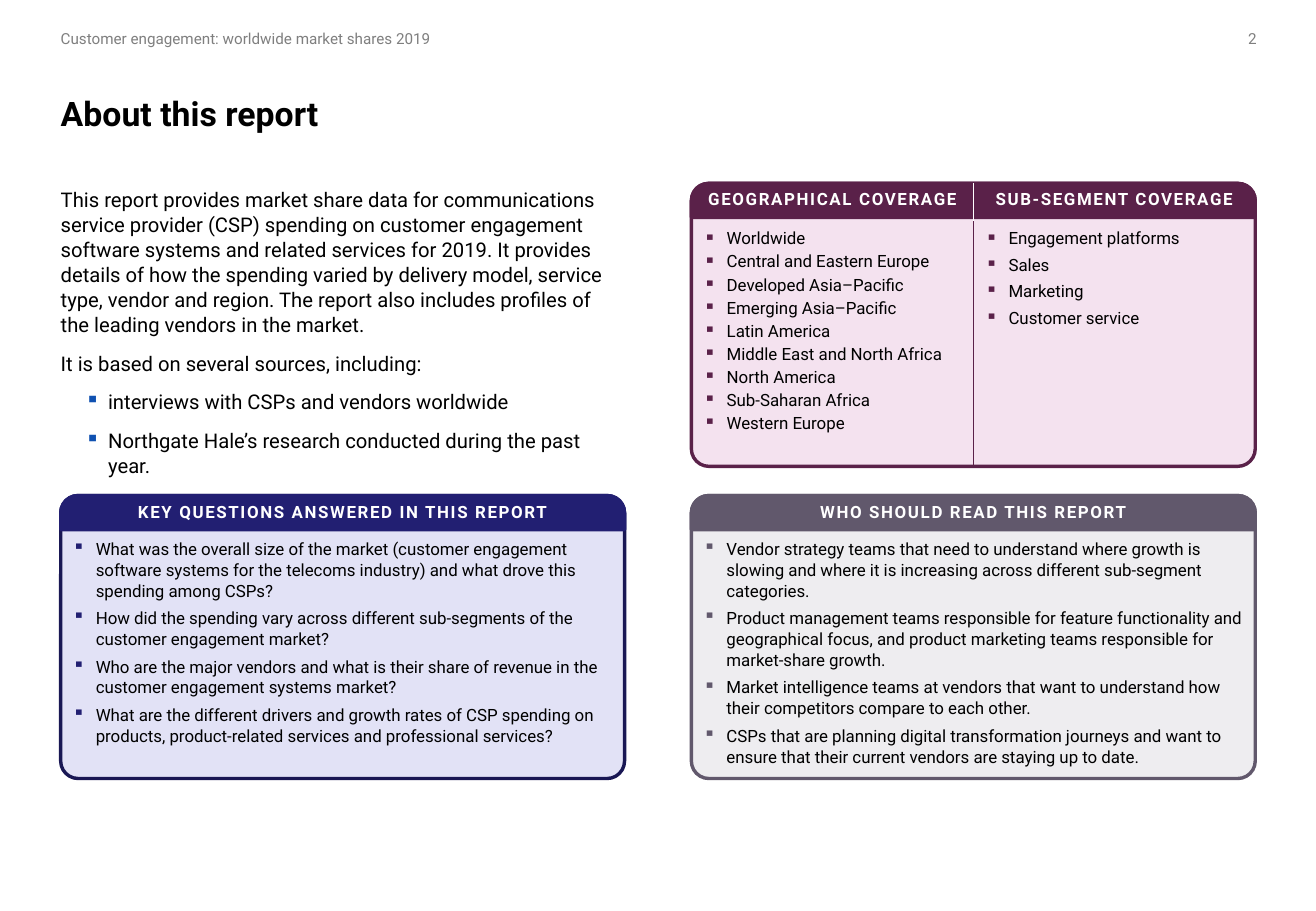
from dataclasses import dataclass

from lxml import etree
from pptx import Presentation
from pptx.dml.color import RGBColor
from pptx.enum.shapes import MSO_CONNECTOR, MSO_SHAPE
from pptx.enum.text import MSO_ANCHOR, PP_ALIGN
from pptx.oxml.ns import qn
from pptx.util import Inches, Pt

ROUNDED = MSO_SHAPE.ROUNDED_RECTANGLE
ROUNDED_TOP = MSO_SHAPE.ROUND_2_SAME_RECTANGLE
STRAIGHT = MSO_CONNECTOR.STRAIGHT
TOP, MIDDLE = MSO_ANCHOR.TOP, MSO_ANCHOR.MIDDLE
LEFT, CENTER, RIGHT = PP_ALIGN.LEFT, PP_ALIGN.CENTER, PP_ALIGN.RIGHT
PLAIN_TABLE = "{2D5ABB26-0587-4C30-8999-92F81FD0307C}"


@dataclass(frozen=True)
class Theme:
    font: str = "Roboto"
    black: str = "000000"
    white: str = "FFFFFF"
    grey: str = "7F7F7F"
    bullet: str = "0F51B1"
    navy: tuple = ("221F72", "191754", "C7C6EF")
    slate: tuple = ("61586C", "61586C", "DFDCE3")
    plum: tuple = ("5A2149", "5A2149", "EAC6E0")
    small: float = 9
    list_size: float = 10
    body: float = 12
    title: float = 20


THEME = Theme()
COLUMN_LEFT, COLUMN_RIGHT = 0.5, 5.69
PANEL_WIDTH, PANEL_HEIGHT, HEADER_HEIGHT = 4.64, 2.33, 0.28
UPPER_TOP, LOWER_TOP = 1.51, 4.08
HANGING = 0.19

INTRODUCTION = [
    "This report provides market share data for communications service provider (CSP) spending on customer engagement software systems and related services for 2019. It provides details of how the spending varied by delivery model, service type, vendor and region. The report also includes profiles of the leading vendors in the market.",
    "It is based on several sources, including:",
]
SOURCES = [
    "interviews with CSPs and vendors worldwide",
    "Northgate Hale’s research conducted during the past year.",
]
QUESTIONS = [
    "What was the overall size of the market (customer engagement software systems for the telecoms industry) and what drove this spending among CSPs?",
    "How did the spending vary across different sub-segments of the customer engagement market?",
    "Who are the major vendors and what is their share of revenue in the customer engagement systems market?",
    "What are the different drivers and growth rates of CSP spending on products, product-related services and professional services?",
]
READERS = [
    "Vendor strategy teams that need to understand where growth is slowing and where it is increasing across different sub-segment categories.",
    "Product management teams responsible for feature functionality and geographical focus, and product marketing teams responsible for market-share growth.",
    "Market intelligence teams at vendors that want to understand how their competitors compare to each other.",
    "CSPs that are planning digital transformation journeys and want to ensure that their current vendors are staying up to date.",
]
COVERAGE = [
    ("GEOGRAPHICAL COVERAGE", 2, [
        "Worldwide", "Central and Eastern Europe", "Developed Asia–Pacific",
        "Emerging Asia–Pacific", "Latin America", "Middle East and North Africa",
        "North America", "Sub-Saharan Africa", "Western Europe"]),
    ("SUB-SEGMENT COVERAGE", 4, [
        "Engagement platforms", "Sales", "Marketing", "Customer service"]),
]


def rgb(color):
    return RGBColor.from_string(color)


def add_bullet(paragraph, color, indent):
    properties = paragraph._p.get_or_add_pPr()
    properties.set("marL", str(Inches(indent)))
    properties.set("indent", str(-Inches(HANGING)))
    bullet_color = etree.SubElement(properties, qn("a:buClr"))
    etree.SubElement(bullet_color, qn("a:srgbClr"), val=color)
    etree.SubElement(properties, qn("a:buChar"), char="▪")


def add_text(frame, text, size=THEME.list_size, color=THEME.black, bold=False,
             align=LEFT, after=0, line_spacing=None, tracking=0, bullet=None, indent=HANGING):
    paragraph = frame.paragraphs[-1]
    if paragraph.runs:
        paragraph = frame.add_paragraph()
    if bullet:
        add_bullet(paragraph, bullet, indent)
    paragraph.alignment = align
    paragraph.space_after = Pt(after)
    paragraph.line_spacing = line_spacing
    run = paragraph.add_run()
    run.text = text
    run.font.name = THEME.font
    run.font.size = Pt(size)
    run.font.bold = bold
    run.font.color.rgb = rgb(color)
    if tracking:
        run._r.get_or_add_rPr().set("spc", str(tracking * 100))


def add_heading(frame, text, after=0):
    add_text(frame, text, color=THEME.white, bold=True, align=CENTER, after=after, tracking=1)


def add_box(slide, left, top, width, height, anchor=TOP, side=0, wrap=True):
    frame = slide.shapes.add_textbox(
        Inches(left), Inches(top), Inches(width), Inches(height)).text_frame
    frame.word_wrap = wrap
    frame.vertical_anchor = anchor
    frame.margin_left = frame.margin_right = Inches(side)
    return frame


def add_panel_shape(slide, kind, left, top, height, fill, line, adjustment):
    shape = slide.shapes.add_shape(
        kind, Inches(left), Inches(top), Inches(PANEL_WIDTH), Inches(height))
    shape.adjustments[0] = adjustment
    shape.shadow.inherit = False
    shape.fill.solid()
    shape.fill.fore_color.rgb = rgb(fill)
    shape.line.color.rgb = rgb(line)
    shape.line.width = Pt(2)
    return shape


def add_panel(slide, left, top, palette, heading=None, items=()):
    header_color, outline, tint = palette
    body = add_panel_shape(slide, ROUNDED, left, top, PANEL_HEIGHT, tint, outline, 0.062)
    tint_element = body._element.spPr.find(qn("a:solidFill")).find(qn("a:srgbClr"))
    etree.SubElement(tint_element, qn("a:alpha"), val="50000")
    header = add_panel_shape(
        slide, ROUNDED_TOP, left, top, HEADER_HEIGHT, header_color, header_color, 0.5)
    if heading:
        frame = header.text_frame
        frame.word_wrap = True
        frame.vertical_anchor = MIDDLE
        frame.margin_top = 0
        add_heading(frame, heading)
    if items:
        frame = add_box(slide, left, top + 0.3, PANEL_WIDTH, PANEL_HEIGHT - 0.3, side=0.1)
        for item in items:
            add_text(frame, item, after=4, line_spacing=1.03, bullet=header_color)


def add_cell_border(cell, side, color):
    border = etree.Element(qn(f"a:{side}"), w=str(Pt(1)))
    fill = etree.SubElement(border, qn("a:solidFill"))
    etree.SubElement(fill, qn("a:srgbClr"), val=color)
    cell._tc.get_or_add_tcPr().insert(0, border)


def add_coverage(slide, left, top):
    color = THEME.plum[0]
    add_panel(slide, left, top, THEME.plum)
    table = slide.shapes.add_table(
        1, len(COVERAGE), Inches(left), Inches(top),
        Inches(PANEL_WIDTH), Inches(PANEL_HEIGHT)).table
    table.first_row = table.horz_banding = False
    table._tbl.tblPr.find(qn("a:tableStyleId")).text = PLAIN_TABLE
    for column, (heading, after, items) in enumerate(COVERAGE):
        cell = table.cell(0, column)
        cell.fill.background()
        add_cell_border(cell, "lnL" if column else "lnR", color)
        add_heading(cell.text_frame, heading, after=12)
        for item in items:
            add_text(cell.text_frame, item, after=after, bullet=color)
    middle = Inches(left + PANEL_WIDTH / 2)
    divider = slide.shapes.add_connector(
        STRAIGHT, middle, Inches(top + 0.31), middle, Inches(top))
    divider.line.color.rgb = rgb(THEME.white)
    divider.line.width = Pt(0.75)
    etree.SubElement(divider._element.spPr, qn("a:effectLst"))


def add_page_header(slide, left, top, width):
    running = add_box(slide, left, top, 3.23, 0.31, anchor=MIDDLE, wrap=False)
    add_text(running, "Customer engagement: worldwide market shares 2019",
             size=THEME.small, color=THEME.grey)
    number = add_box(slide, left + width - 0.75, top, 0.75, 0.31, anchor=MIDDLE)
    add_text(number, "2", size=THEME.small, color=THEME.grey, align=RIGHT)
    title = add_box(slide, left, top + 0.35, width, 0.83, anchor=MIDDLE)
    add_text(title, "About this report", size=THEME.title, bold=True, line_spacing=Pt(25))


def add_introduction(slide, left, top, width, height):
    frame = add_box(slide, left, top, width, height)
    for text in INTRODUCTION:
        add_text(frame, text, size=THEME.body, after=8, line_spacing=1.03)
    for text in SOURCES:
        add_text(frame, text, size=THEME.body, after=8, line_spacing=1.03,
                 bullet=THEME.bullet, indent=0.39)


def main():
    presentation = Presentation()
    presentation.slide_width = Inches(10.83)
    presentation.slide_height = Inches(7.5)
    slide = presentation.slides.add_slide(presentation.slide_layouts[6])
    add_page_header(slide, COLUMN_LEFT, 0.16, 9.84)
    add_introduction(slide, COLUMN_LEFT, 1.49, PANEL_WIDTH, 2.35)
    add_coverage(slide, COLUMN_RIGHT, UPPER_TOP)
    add_panel(slide, COLUMN_LEFT, LOWER_TOP, THEME.navy,
              "KEY QUESTIONS ANSWERED IN THIS REPORT", QUESTIONS)
    add_panel(slide, COLUMN_RIGHT, LOWER_TOP, THEME.slate,
              "WHO SHOULD READ THIS REPORT", READERS)
    presentation.save("out.pptx")


if __name__ == "__main__":
    main()
